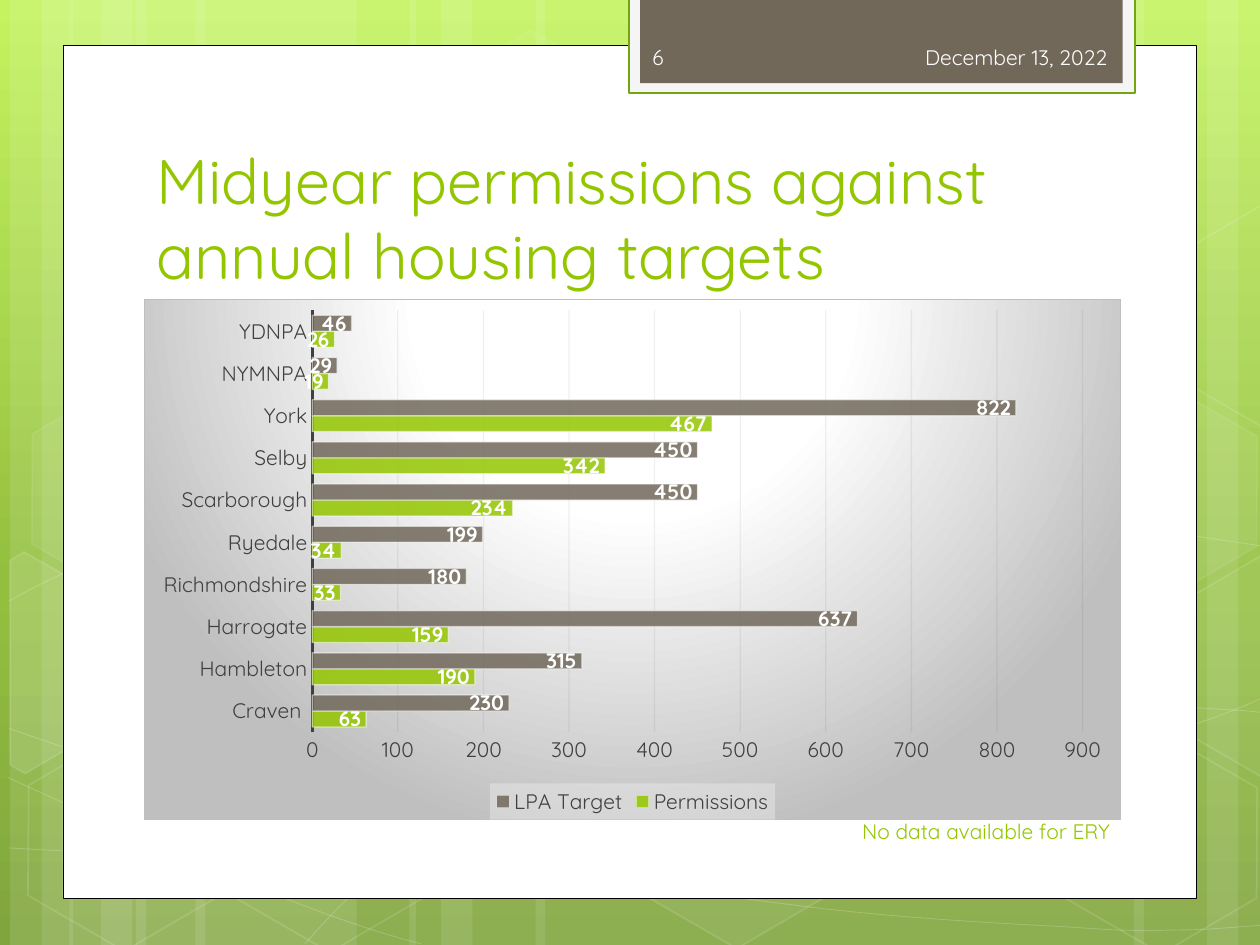
from lxml.etree import SubElement
from pptx import Presentation
from pptx.chart.data import CategoryChartData
from pptx.dml.color import RGBColor
from pptx.enum.chart import XL_CHART_TYPE, XL_LABEL_POSITION, XL_LEGEND_POSITION, XL_TICK_MARK
from pptx.enum.shapes import MSO_SHAPE
from pptx.enum.text import MSO_ANCHOR, MSO_AUTO_SIZE, PP_ALIGN
from pptx.oxml import parse_xml
from pptx.oxml.ns import nsdecls, qn
from pptx.util import Inches, Pt

FONT = "Quicksand"
COLORS = {
    "white": "FFFFFF", "black": "000000", "lime": "94C600", "taupe": "71685A",
    "tab": "F5F5F5", "tab_edge": "74A510", "header_text": "FEFEFE",
    "axis": "404040", "grid": "0D0D0D", "grey": "BFBFBF", "legend": "F2F2F2",
    "sky": "C3F35F", "leaf": "93BF3F", "moss": "81A53E",
}

# Background bands: left, width
BANDS = [(1.08, 1.75), (0.08, 0.5), (0.33, 0.83), (1.55, 1.75), (0.55, 0.5), (0.8, 0.83),
         (7.33, 1.75), (9.58, 0.5), (9, 0.83), (4.25, 3.08), (3.25, 0.5), (3.5, 0.83)]

# Flowing lines: a start point, then cubic segments of two controls and an end
WAVES = [
    [(0.07, 6.73), (0.61, 6.76), (1.15, 6.79), (1.9, 6.78), (2.65, 6.77), (3.58, 6.75),
     (4.58, 6.65), (5.58, 6.55), (7, 6.36), (7.92, 6.17), (8.83, 5.98), (9.77, 5.68), (10.07, 5.51)],
    [(0.07, 4.77), (0.36, 4.61), (0.65, 4.46), (1.21, 4.31), (1.78, 4.16), (2.59, 3.94),
     (3.47, 3.87), (4.36, 3.8), (5.44, 3.79), (6.54, 3.87), (7.64, 3.95), (9.47, 4.26), (10.07, 4.34)],
    [(0.06, 6.17), (1.27, 6.72), (2.47, 7.27), (3.34, 7.49)],
    [(0.07, 5.78), (0.38, 5.89), (0.7, 6), (1.28, 6.16), (1.86, 6.31), (2.73, 6.56),
     (3.57, 6.73), (4.4, 6.9), (5.45, 7.08), (6.28, 7.18), (7.11, 7.29), (8, 7.33),
     (8.53, 7.36), (9.05, 7.4), (9.19, 7.38), (9.45, 7.38), (9.71, 7.37), (9.89, 7.35), (10.07, 7.34)],
    [(2.42, 7.49), (2.6, 7.29), (2.78, 7.09), (3.02, 6.91), (3.26, 6.73), (3.6, 6.53),
     (3.88, 6.39), (4.16, 6.25), (4.33, 6.19), (4.7, 6.09), (5.06, 5.99), (5.73, 5.85),
     (6.08, 5.78), (6.44, 5.71), (6.49, 5.71), (6.8, 5.69), (7.11, 5.66), (7.6, 5.63),
     (7.94, 5.62), (8.29, 5.61), (8.86, 5.62), (8.86, 5.62), (9.08, 5.62), (9.31, 5.62),
     (9.53, 5.62), (9.71, 5.63), (9.88, 5.64), (9.97, 5.65), (10.06, 5.66), (10.03, 5.65), (10.06, 5.66)],
]

# Hexagons: left, top, fill opacity (None for no fill), line opacity
HEXAGONS = [(3.34, 0.36, 4, 8), (4.97, 5.89, 6, 12), (0.11, 5.91, None, 12),
            (0.14, 3.12, 7, 8), (1.74, 5.92, None, 12), (7.53, 4.53, 10, 12),
            (8.34, 5.93, None, 12), (8.34, 3.14, 7, 8)]

# Hexagons cut by the slide edge: fill opacity, corners
CUT_HEXAGONS = [
    (10, [(0.08, 4.45), (0.19, 4.38), (0.96, 4.82), (0.95, 5.7), (0.2, 6.14), (0.08, 6.07)]),
    (4, [(9.26, 4.85), (10.01, 4.41), (10.09, 4.46), (10.09, 6.13), (10.02, 6.17), (9.26, 5.73)]),
    (None, [(9.26, 2.07), (10.01, 1.63), (10.1, 1.68), (10.09, 3.35), (10.02, 3.39), (9.26, 2.95)]),
]

DISTRICTS = ["Craven ", "Hambleton", "Harrogate", "Richmondshire", "Ryedale",
             "Scarborough", "Selby", "York", "NYMNPA", "YDNPA"]
SERIES = [("Permissions", "lime", [63, 190, 159, 33, 34, 234, 342, 467, 19, 26]),
          ("LPA Target", "taupe", [230, 315, 637, 180, 199, 450, 450, 822, 29, 46])]


def rgb(name):
    return RGBColor.from_string(COLORS[name])


def paint(fill, color, opacity=100):
    """Fill with a colour, or with nothing when opacity is None."""
    if opacity is None:
        fill.background()
        return
    fill.solid()
    fill.fore_color.rgb = rgb(color)
    if opacity < 100:
        for srgb in fill._xPr.find(qn("a:solidFill")):
            SubElement(srgb, qn("a:alpha")).set("val", str(opacity * 1000))


def outline(line, color, width, opacity=100):
    paint(line.fill, color, opacity)
    line.width = Pt(width)


def gradient(stops, direction):
    stop_xml = "".join(f'<a:gs pos="{at * 1000}"><a:srgbClr val="{COLORS[color]}"/></a:gs>'
                       for at, color in stops)
    return parse_xml(f'<a:gradFill {nsdecls("a")} rotWithShape="1">'
                     f"<a:gsLst>{stop_xml}</a:gsLst>{direction}</a:gradFill>")


def style_font(font, size, color, bold=None):
    font.name, font.size, font.bold = FONT, Pt(size), bold
    font.color.rgb = rgb(color)


def add_panel(slide, box, color, opacity=100, kind=MSO_SHAPE.RECTANGLE):
    panel = slide.shapes.add_shape(kind, *map(Inches, box))
    panel.shadow.inherit = False
    paint(panel.fill, color, opacity)
    panel.line.fill.background()
    return panel


def add_outline_shape(slide, points, close, fill_opacity, width, line_opacity):
    points = [(Inches(x), Inches(y)) for x, y in points]
    builder = slide.shapes.build_freeform(*points[0])
    builder.add_line_segments(points[1:], close=close)
    figure = builder.convert_to_shape()
    figure.shadow.inherit = False
    paint(figure.fill, "white", fill_opacity)
    outline(figure.line, "white", width, line_opacity)
    return figure


def bend(figure):
    """Turn each three straight segments into one cubic curve."""
    segments = list(figure._element.iter(qn("a:lnTo")))
    for i in range(0, len(segments), 3):
        curve = parse_xml(f'<a:cubicBezTo {nsdecls("a")}/>')
        segments[i].addprevious(curve)
        for segment in segments[i:i + 3]:
            curve.append(segment[0])
            segment.getparent().remove(segment)


def add_background(slide):
    slide.background.fill.solid()
    properties = slide._element.find(".//" + qn("p:bgPr"))
    properties.replace(properties[0], gradient(
        [(0, "sky"), (62, "leaf"), (100, "moss")], '<a:lin ang="5400000" scaled="0"/>'))
    for left, width in BANDS:
        add_panel(slide, (left, 0, width, 7.5), "white", 10)
    for wave in WAVES:
        bend(add_outline_shape(slide, wave, False, None, 0.5, 20))
    for left, top, fill_opacity, line_opacity in HEXAGONS:
        hexagon = add_panel(slide, (left, top, 1.75, 1.52), "white", fill_opacity, MSO_SHAPE.HEXAGON)
        hexagon.adjustments[0] = 0.285
        hexagon.rotation = 30
        outline(hexagon.line, "white", 1, line_opacity)
    for fill_opacity, corners in CUT_HEXAGONS:
        add_outline_shape(slide, corners, True, fill_opacity, 1, 12)


def write_text(holder, box, text, size, color, align, anchor):
    holder.left, holder.top, holder.width, holder.height = map(Inches, box)
    frame = holder.text_frame
    frame.text = text
    frame.word_wrap = True
    frame.auto_size = MSO_AUTO_SIZE.NONE
    frame.vertical_anchor = anchor
    frame.paragraphs[0].alignment = align
    style_font(frame.paragraphs[0].runs[0].font, size, color)


def add_label(slide, box, text, color, align):
    label = slide.shapes.add_textbox(*map(Inches, box))
    write_text(label, box, text, 12, color, align, MSO_ANCHOR.MIDDLE)


def add_housing_chart(slide):
    data = CategoryChartData()
    data.categories = DISTRICTS
    for name, _, values in SERIES:
        data.add_series(name, values)
    chart = slide.shapes.add_chart(XL_CHART_TYPE.BAR_CLUSTERED, Inches(1.14), Inches(2.37),
                                   Inches(7.76), Inches(4.14), data).chart
    chart.has_title = False
    style_font(chart.font, 10, "black")

    # Bars and value labels
    plot = chart.plots[0]
    plot.gap_width, plot.overlap, plot.vary_by_categories = 65, 0, False
    for series, (_, color, _) in zip(plot.series, SERIES):
        paint(series.format.fill, color, 85)
        outline(series.format.line, "white", 0.75, 50)
        labels = series.data_labels
        labels.show_value = True
        labels.position = XL_LABEL_POSITION.INSIDE_END
        style_font(labels.font, 12, "white", True)

    # Axes
    districts, permissions = chart.category_axis, chart.value_axis
    for axis in (districts, permissions):
        axis.major_tick_mark = axis.minor_tick_mark = XL_TICK_MARK.NONE
        style_font(axis.tick_labels.font, 12, "axis")
    outline(districts.format.line, "axis", 1.5)
    permissions.format.line.fill.background()
    outline(permissions.major_gridlines.format.line, "grid", 0.75, 5)

    # Legend
    chart.has_legend = True
    chart.legend.position = XL_LEGEND_POSITION.BOTTOM
    chart.legend.include_in_layout = False
    style_font(chart.legend.font, 12, "axis")
    legend_fill = (f'<c:spPr {nsdecls("c", "a")}><a:solidFill><a:srgbClr val="{COLORS["legend"]}">'
                   '<a:alpha val="39000"/></a:srgbClr></a:solidFill></c:spPr>')
    chart.legend._element.find(qn("c:txPr")).addprevious(parse_xml(legend_fill))

    # Plot position
    plot_area = chart._chartSpace.chart.plotArea
    for old_layout in plot_area.findall(qn("c:layout")):
        plot_area.remove(old_layout)
    settings = {"layoutTarget": "inner", "xMode": "edge", "yMode": "edge",
                "x": 0.172, "y": 0.021, "w": 0.789, "h": 0.811}
    layout_xml = "".join(f'<c:{key} val="{value}"/>' for key, value in settings.items())
    plot_area.insert(0, parse_xml(f'<c:layout {nsdecls("c")}><c:manualLayout>{layout_xml}'
                                  "</c:manualLayout></c:layout>"))

    # Chart ground and border
    ground = parse_xml(f'<c:spPr {nsdecls("c", "a")}><a:ln w="9525"><a:solidFill>'
                       f'<a:srgbClr val="{COLORS["grey"]}"/></a:solidFill></a:ln></c:spPr>')
    ground.insert(0, gradient(
        [(0, "white"), (39, "white"), (100, "grey")],
        '<a:path path="circle"><a:fillToRect l="50000" t="-80000" r="50000" b="180000"/></a:path>'))
    chart._chartSpace.chart.addnext(ground)


def main():
    deck = Presentation()
    deck.slide_width, deck.slide_height = Inches(10), Inches(7.5)
    slide = deck.slides.add_slide(deck.slide_layouts[5])
    add_background(slide)

    # Page and header tab
    page = add_panel(slide, (0.5, 0.36, 9, 6.77), "white")
    outline(page.line, "black", 0.5)
    tab = add_panel(slide, (4.99, -0.02, 4.02, 0.76), "tab")
    outline(tab.line, "tab_edge", 1.25)
    add_panel(slide, (5.08, -0.02, 3.83, 0.68), "taupe")

    # Title, moved in front of the page
    title = slide.shapes.title
    slide.shapes._spTree.append(title._element)
    write_text(title, (1.14, 1.12, 7.68, 1.25), "Midyear permissions against annual housing targets",
               36, "lime", PP_ALIGN.LEFT, MSO_ANCHOR.BOTTOM)

    # Date, note and slide number
    add_label(slide, (6.56, 0.25, 2.33, 0.4), "December 13, 2022", "header_text", PP_ALIGN.RIGHT)
    add_label(slide, (5.08, 6.4, 3.83, 0.4), "No data available for ERY", "lime", PP_ALIGN.RIGHT)
    add_label(slide, (5.08, 0.25, 1.46, 0.4), "6", "header_text", PP_ALIGN.LEFT)

    add_housing_chart(slide)
    deck.save("out.pptx")


if __name__ == "__main__":
    main()
